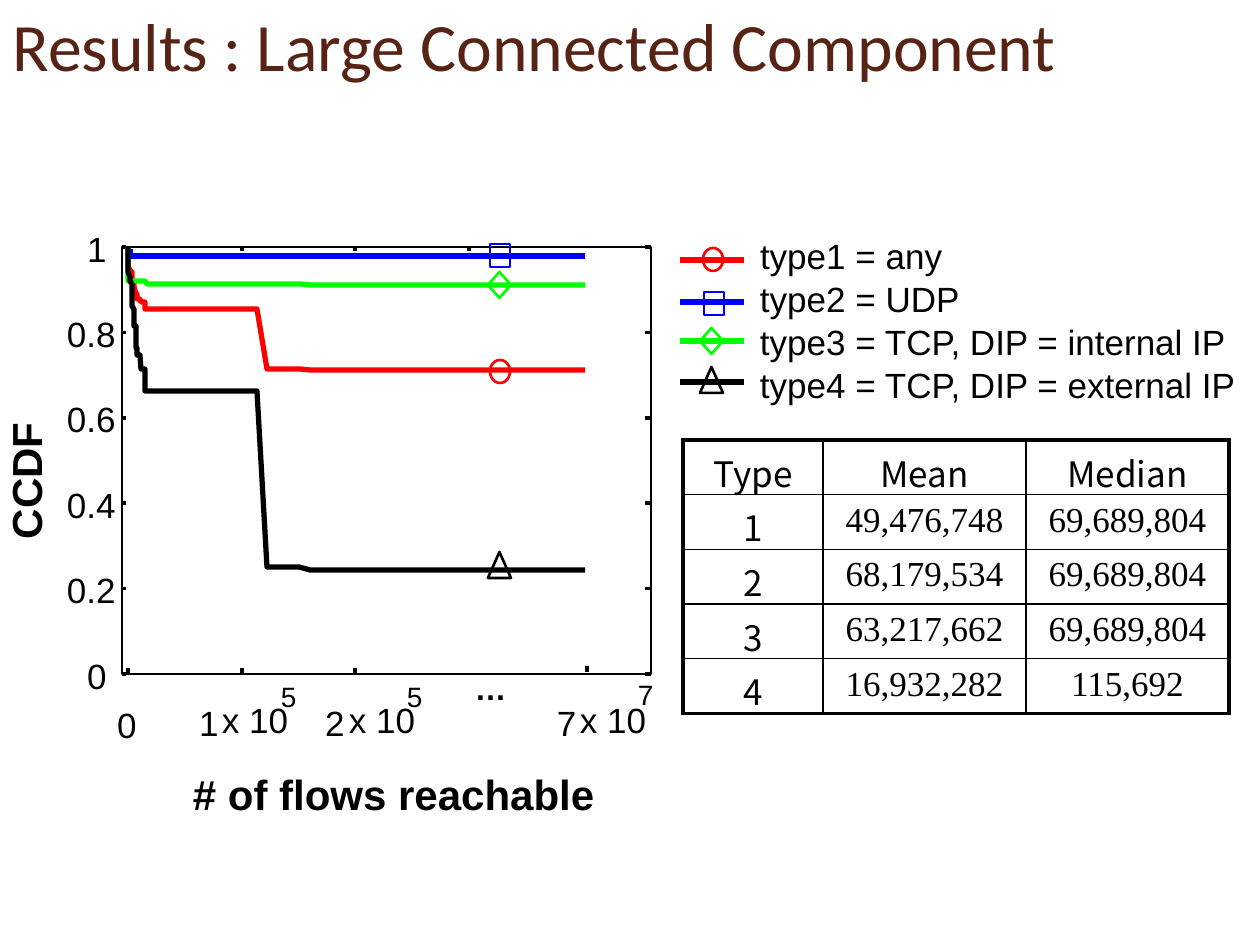
import pptx
import pptx.util
import pptx.dml.color
import pptx.enum.shapes
import pptx.enum.text
import pptx.oxml.ns
import lxml.etree

PX = 914400 / 126
BLACK = pptx.dml.color.RGBColor(0, 0, 0)
RED = pptx.dml.color.RGBColor(255, 0, 0)
GREEN = pptx.dml.color.RGBColor(0, 255, 0)
BLUE = pptx.dml.color.RGBColor(0, 0, 255)
BROWN = pptx.dml.color.RGBColor(0x57, 0x23, 0x14)
SHAPES = pptx.enum.shapes.MSO_SHAPE

TITLE = "Results : Large Connected Component"
PLOT_LEFT, PLOT_TOP, PLOT_RIGHT, PLOT_BOTTOM = 122, 247, 651, 674
TOP_TICKS = [128, 242, 355, 469]
BOTTOM_TICKS = [(128, 674), (242, 674), (355, 674), (587, 672)]
Y_LABELS = [("0", 87, 20), ("0.2", 67, 49), ("0.4", 67, 49),
            ("0.6", 67, 49), ("0.8", 67, 49), ("1", 87, 20)]

# text, left, top, width, height, size, bold, rotation
LABELS = [
    ("0", 117, 703, 20, 43, 20, False, 0),
    ("…", 475, 669, 34, 47, 18, True, 0),
    ("# of flows reachable", 193, 769, 406, 50, 24, True, 0),
    ("CCDF", -34, 455, 118, 50, 24, True, 270),
]
# digit, digit left, "x 10" left, exponent, exponent left, exponent top
POWERS = [("1", 199, 222, "5", 281, 680), ("2", 325, 349, "5", 407, 680),
          ("7", 557, 580, "7", 638, 678)]

# colour, points, marker, marker width and height, marker on curve, marker in legend,
# legend line height, legend text, legend text width
SERIES = [
    (RED, [(128, 247), (128, 268), (132, 272), (132, 281), (134, 281), (134, 287),
           (136, 294), (137, 294), (137, 299), (140, 299), (141, 302), (145, 302),
           (145, 309), (257, 309), (267, 369), (299, 369), (310, 370), (585, 370)],
     SHAPES.OVAL, (20, 23), (490, 360), (703, 248), 260, "type1 = any", 184),
    (BLUE, [(130, 249), (130, 256), (585, 256)],
     SHAPES.RECTANGLE, (20, 23), (490, 244), (704, 292), 302, "type2 = UDP", 202),
    (GREEN, [(128, 247), (128, 281), (145, 281), (147, 284), (299, 284), (310, 285),
             (585, 285)],
     SHAPES.DIAMOND, (23, 26), (488, 272), (700, 328), 341,
     "type3 = TCP, DIP = internal IP", 469),
    (BLACK, [(128, 247), (128, 272), (130, 277), (130, 281), (132, 284), (132, 306),
             (134, 309), (134, 326), (136, 326), (136, 348), (137, 348), (137, 355),
             (140, 355), (141, 369), (145, 369), (145, 391), (257, 391), (267, 567),
             (299, 567), (310, 570), (585, 570)],
     SHAPES.ISOSCELES_TRIANGLE, (23, 26), (488, 552), (700, 367), 382,
     "type4 = TCP, DIP = external IP", 479),
]

TABLE = [("Type", "Mean", "Median"),
         ("1", "49,476,748", "69,689,804"),
         ("2", "68,179,534", "69,689,804"),
         ("3", "63,217,662", "69,689,804"),
         ("4", "16,932,282", "115,692")]
TABLE_LEFT, TABLE_TOP, ROW_HEIGHT = 683, 440, 50
COLUMN_WIDTHS = [140, 203, 203]


def emu(*lengths):
    return [round(length * PX) for length in lengths]


def add_run(paragraph, text, size, font, color=BLACK, bold=False):
    run = paragraph.add_run()
    run.text = text
    run.font.size = pptx.util.Pt(size)
    run.font.name = font
    run.font.color.rgb = color
    run.font.bold = bold


def add_label(slide, text, left, top, width, height=43, size=20, bold=False, rotation=0):
    box = slide.shapes.add_textbox(*emu(left, top, width, height))
    box.rotation = rotation
    frame = box.text_frame
    frame.margin_left = frame.margin_right = frame.margin_top = frame.margin_bottom = 0
    frame.word_wrap = False
    frame.auto_size = pptx.enum.text.MSO_AUTO_SIZE.SHAPE_TO_FIT_TEXT
    add_run(frame.paragraphs[0], text, size, "Arial", bold=bold)


def set_outline(shape, color, width):
    shape.shadow.inherit = False
    shape.fill.background()
    shape.line.color.rgb = color
    shape.line.width = pptx.util.Pt(width)


def add_line(slide, x1, y1, x2, y2, color=BLACK, width=0):
    line = slide.shapes.add_connector(
        pptx.enum.shapes.MSO_CONNECTOR.STRAIGHT, *emu(x1, y1, x2, y2))
    line.line.color.rgb = color
    line.line.width = pptx.util.Pt(width)
    lxml.etree.SubElement(line.element.spPr, pptx.oxml.ns.qn("a:effectLst"))


def add_outline_shape(slide, kind, left, top, width, height, color, line_width):
    shape = slide.shapes.add_shape(kind, *emu(left, top, width, height))
    set_outline(shape, color, line_width)


def add_axes(slide):
    add_outline_shape(slide, SHAPES.RECTANGLE, PLOT_LEFT, PLOT_TOP,
                      PLOT_RIGHT - PLOT_LEFT, PLOT_BOTTOM - PLOT_TOP, BLACK, 0)
    for x in TOP_TICKS:
        add_line(slide, x, PLOT_TOP, x, PLOT_TOP + 4)
    for x, y in BOTTOM_TICKS:
        add_line(slide, x, y, x, y - 6)
    step = (PLOT_BOTTOM - PLOT_TOP) / (len(Y_LABELS) - 1)
    for index, (text, left, width) in enumerate(Y_LABELS):
        y = PLOT_BOTTOM - index * step
        add_line(slide, PLOT_LEFT, y, PLOT_LEFT + 4, y)
        add_line(slide, PLOT_RIGHT, y, PLOT_RIGHT - 6, y)
        add_label(slide, text, left, y - 20, width)
    for label in LABELS:
        add_label(slide, *label)
    for digit, digit_left, base_left, exponent, exponent_left, exponent_top in POWERS:
        add_label(slide, digit, digit_left, 701, 20)
        add_label(slide, "x 10", base_left, 698, 67)
        add_label(slide, exponent, exponent_left, exponent_top, 15, 34, 16)


def add_series(slide):
    for color, points, *rest in SERIES:
        builder = slide.shapes.build_freeform(*points[0], scale=PX)
        builder.add_line_segments(points[1:], close=False)
        set_outline(builder.convert_to_shape(), color, 3)
    for index, series in enumerate(SERIES):
        color, points, marker, size, on_curve, in_legend, key_y, text, width = series
        add_line(slide, 680, key_y, 744, key_y, color, 3)
        for position in (on_curve, in_legend):
            add_outline_shape(slide, marker, *position, *size, color, 1.5)
        add_label(slide, text, 760, 234 + 43 * index, width)


def set_borders(cell, outer_sides):
    properties = cell._tc.get_or_add_tcPr()
    for side in "LRTB":
        width = pptx.util.Pt(2.25 if side in outer_sides else 1)
        line = lxml.etree.SubElement(
            properties, pptx.oxml.ns.qn("a:ln" + side), w=str(int(width)))
        fill = lxml.etree.SubElement(line, pptx.oxml.ns.qn("a:solidFill"))
        lxml.etree.SubElement(fill, pptx.oxml.ns.qn("a:srgbClr"), val=str(BLACK))


def add_statistics(slide):
    rows, columns = len(TABLE), len(COLUMN_WIDTHS)
    table = slide.shapes.add_table(rows, columns, *emu(
        TABLE_LEFT, TABLE_TOP, sum(COLUMN_WIDTHS), ROW_HEIGHT * rows)).table
    table.first_row = table.horz_banding = False
    for column, width in zip(table.columns, COLUMN_WIDTHS):
        column.width = emu(width)[0]
    for r, values in enumerate(TABLE):
        for c, value in enumerate(values):
            cell = table.cell(r, c)
            outer = {"T": r == 0, "B": r == rows - 1, "L": c == 0, "R": c == columns - 1}
            set_borders(cell, [side for side in outer if outer[side]])
            cell.fill.background()
            paragraph = cell.text_frame.paragraphs[0]
            paragraph.alignment = pptx.enum.text.PP_ALIGN.CENTER
            font = "Times New Roman" if r and c else "Noto Sans CJK KR"
            add_run(paragraph, value, 20, font)


def main():
    presentation = pptx.Presentation()
    presentation.slide_width, presentation.slide_height = emu(1260, 945)
    slide = presentation.slides.add_slide(presentation.slide_layouts[5])
    title = slide.shapes.title
    title.left, title.top, title.width, title.height = emu(0, 0, 1229, 88)
    title.text_frame.auto_size = pptx.enum.text.MSO_AUTO_SIZE.NONE
    title.text_frame.vertical_anchor = pptx.enum.text.MSO_ANCHOR.MIDDLE
    paragraph = title.text_frame.paragraphs[0]
    paragraph.alignment = pptx.enum.text.PP_ALIGN.LEFT
    add_run(paragraph, TITLE, 38.7, "Calibri", BROWN)
    add_axes(slide)
    add_series(slide)
    add_statistics(slide)
    presentation.save("out.pptx")


if __name__ == "__main__":
    main()
